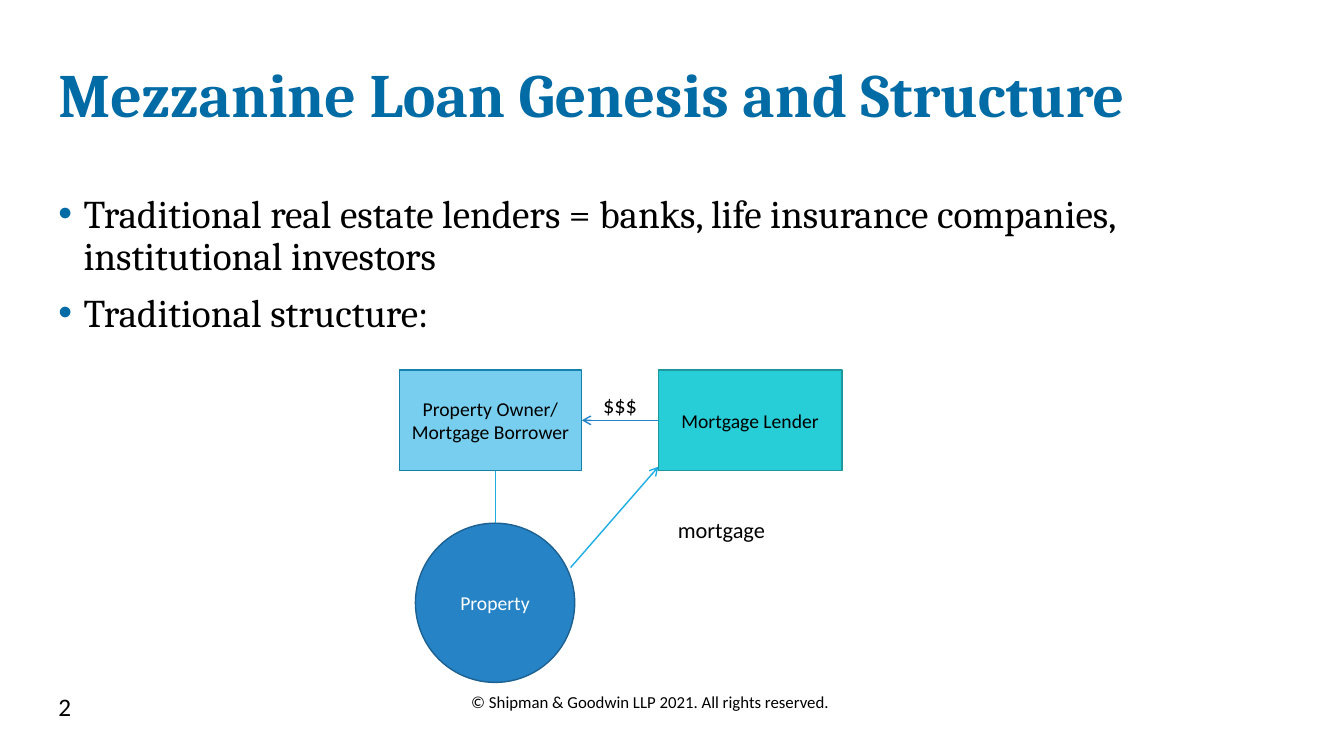
import pptx
import pptx.util
import pptx.dml.color
import pptx.enum.shapes
import pptx.enum.text
import pptx.oxml
import pptx.oxml.ns

PX = 9144
COLOURS = {
    "heading": "006BA4", "black": "000000", "white": "FFFFFF",
    "owner": "77CEEF", "owner_edge": "1580A9",
    "lender": "27CED7", "lender_edge": "1D989F",
    "property": "2683C6", "property_edge": "1C6192",
    "link": "1CADE4",
}
SHAPES = pptx.enum.shapes.MSO_SHAPE
ANCHORS = pptx.enum.text.MSO_ANCHOR
CENTER = pptx.enum.text.PP_ALIGN.CENTER


def emu(*lengths):
    return [length * PX for length in lengths]


def colour(name):
    return pptx.dml.color.RGBColor.from_string(COLOURS[name])


def apply_format(target, values):
    for name, value in values.items():
        setattr(target, name, value)


def add_bullet(para):
    properties = para._p.get_or_add_pPr()
    properties.set("marL", str(25 * PX))
    properties.set("indent", str(-25 * PX))
    for tag, attribute, value in (("buClr", None, None),
                                  ("buFont", "typeface", "Arial"),
                                  ("buChar", "char", "•")):
        element = pptx.oxml.parse_xml(
            f'<a:{tag} {pptx.oxml.ns.nsdecls("a")}/>')
        if attribute:
            element.set(attribute, value)
        else:
            element.append(pptx.oxml.parse_xml(
                f'<a:srgbClr {pptx.oxml.ns.nsdecls("a")} '
                f'val="{COLOURS["heading"]}"/>'))
        properties.append(element)


def write_text(box, lines, size, ink="black", font="Calibri", bold=False,
               anchor=ANCHORS.TOP, bullets=False, **layout):
    frame = box.text_frame
    apply_format(frame, {"word_wrap": True, "vertical_anchor": anchor})
    for index, line in enumerate(lines):
        para = frame.paragraphs[0] if index == 0 else frame.add_paragraph()
        apply_format(para, layout)
        if bullets:
            if index:
                para.space_before = pptx.util.Pt(10)
            add_bullet(para)
        span = para.add_run()
        span.text = line
        apply_format(span.font, {"name": font, "size": pptx.util.Pt(size),
                                 "bold": bold})
        span.font.color.rgb = colour(ink)


def add_text(page, place, lines, size, **values):
    box = page.shapes.add_textbox(*emu(*place))
    write_text(box, lines, size, **values)


def add_party(page, kind, place, lines, fill, ink="black"):
    shape = page.shapes.add_shape(kind, *emu(*place))
    shape.shadow.inherit = False
    shape.fill.solid()
    shape.fill.fore_color.rgb = colour(fill)
    shape.line.color.rgb = colour(fill + "_edge")
    shape.line.width = pptx.util.Pt(1)
    write_text(shape, lines, 14, ink=ink, anchor=ANCHORS.MIDDLE,
               alignment=CENTER)
    return shape


def add_link(page, ends, ink, width=1, arrow=True):
    link = page.shapes.add_connector(
        pptx.enum.shapes.MSO_CONNECTOR.STRAIGHT, *emu(*ends))
    link.line.color.rgb = colour(ink)
    link.line.width = pptx.util.Pt(width)
    if arrow:
        link.line._get_or_add_ln().append(pptx.oxml.parse_xml(
            f'<a:tailEnd {pptx.oxml.ns.nsdecls("a")} type="arrow"/>'))
    link._element.spPr.append(pptx.oxml.parse_xml(
        f'<a:effectLst {pptx.oxml.ns.nsdecls("a")}/>'))
    return link


def main():
    deck = pptx.Presentation()
    apply_format(deck, {"slide_width": 1333 * PX, "slide_height": 750 * PX})
    page = deck.slides.add_slide(deck.slide_layouts[6])

    add_text(page, (48, 20, 1242, 154),
             ["Mezzanine Loan Genesis and Structure"], 44, ink="heading",
             font="Cambria", bold=True, anchor=ANCHORS.MIDDLE,
             line_spacing=0.9)
    add_text(page, (48, 188, 1242, 488),
             ["Traditional real estate lenders = banks, life insurance "
              "companies, institutional investors",
              "Traditional structure:"], 28, font="Cambria", bullets=True,
             line_spacing=0.9)
    add_text(page, (420, 681, 450, 40),
             ["© Shipman & Goodwin LLP 2021. All rights reserved."], 12,
             alignment=CENTER)
    add_text(page, (48, 681, 300, 40), ["2"], 18)

    add_party(page, SHAPES.OVAL, (412, 519, 158, 158), ["Property"],
              "property", ink="white")
    add_link(page, (491, 467, 491, 519), "link", width=0.5, arrow=False)
    add_link(page, (566, 563, 653, 463), "link")
    owner = add_party(page, SHAPES.RECTANGLE, (396, 367, 181, 100),
                      ["Property Owner/", "Mortgage Borrower"], "owner")
    lender = add_party(page, SHAPES.RECTANGLE, (653, 367, 182, 100),
                       ["Mortgage Lender"], "lender")
    funding = add_link(page, (653, 417, 577, 417), "property")
    funding.begin_connect(lender, 1)
    funding.end_connect(owner, 3)

    add_text(page, (578, 383, 74, 37), ["$$$"], 16, alignment=CENTER)
    add_text(page, (608, 507, 215, 37), ["mortgage"], 16, alignment=CENTER)
    deck.save("out.pptx")


if __name__ == "__main__":
    main()
